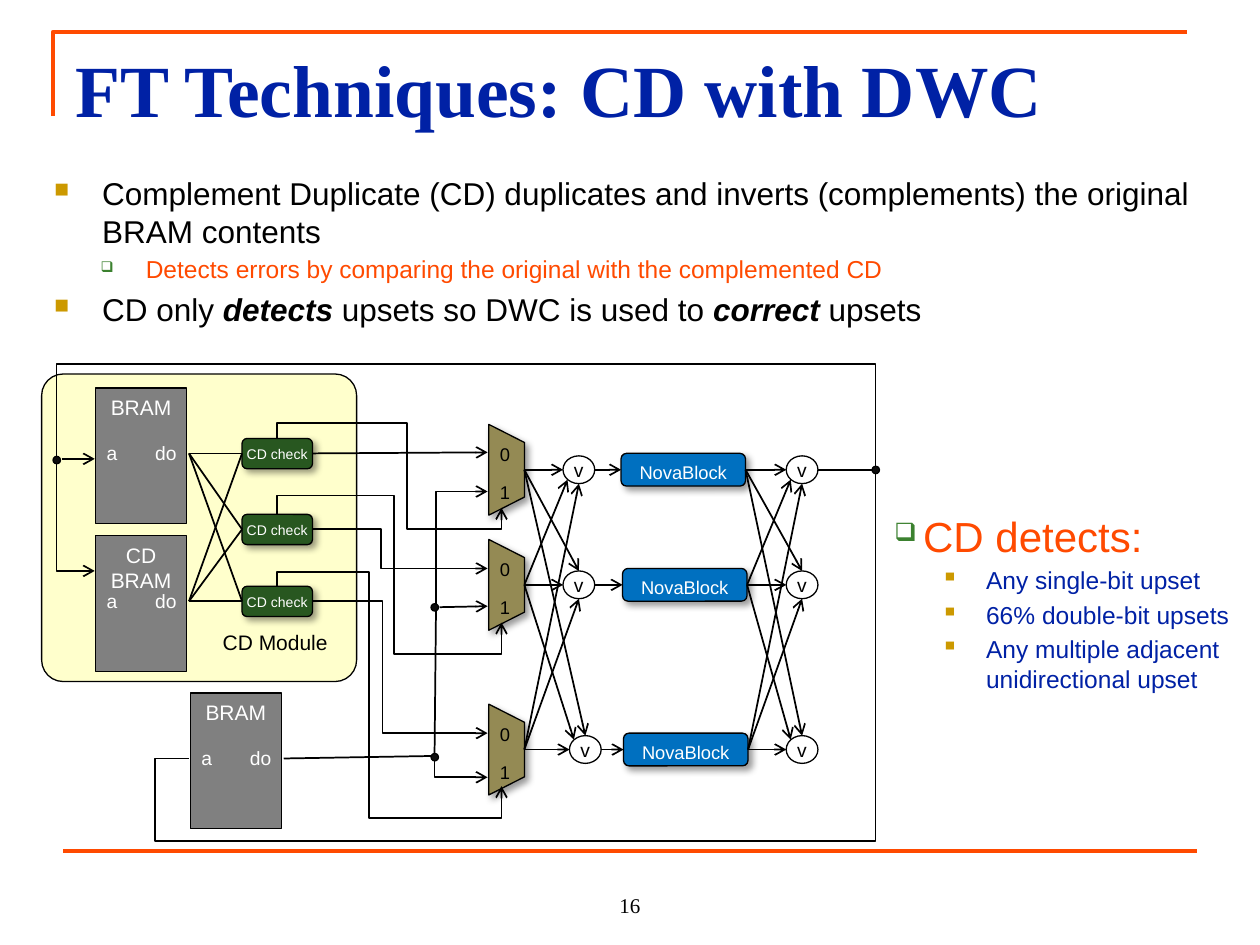
from lxml.etree import SubElement
from pptx import Presentation
from pptx.dml.color import RGBColor
from pptx.enum.shapes import MSO_CONNECTOR, MSO_SHAPE
from pptx.enum.text import MSO_ANCHOR, PP_ALIGN
from pptx.oxml.ns import qn
from pptx.util import Cm, Pt

BLACK, WHITE, BLUE, RED = "000000", "FFFFFF", "0021A5", "FF4A00"
GOLD, GREEN = "CC9900", "3B812F"
LEFT, MID, RIGHT = PP_ALIGN.LEFT, PP_ALIGN.CENTER, PP_ALIGN.RIGHT


def tint(code):
    return RGBColor.from_string(code)


def add(node, tag, **attrs):
    return SubElement(node, qn(tag), {k: str(v) for k, v in attrs.items()})


class Board:
    def __init__(self, deck, face="Arial"):
        self.slide = deck.slides.add_slide(deck.slide_layouts[6])
        self.shapes = self.slide.shapes
        self.face = face

    def style(self, para, size, color, align=LEFT, bold=None, face=None):
        para.alignment = align
        font = para.font
        font.name, font.size, font.bold = face or self.face, Pt(size), bold
        font.color.rgb = tint(color)

    def frame(self, x, y, w, h, wrap=True, anchor=MSO_ANCHOR.TOP):
        frame = self.shapes.add_textbox(Cm(x), Cm(y), Cm(w), Cm(h)).text_frame
        frame.word_wrap, frame.vertical_anchor = wrap, anchor
        return frame

    def label(self, text, x, y, w, h, size, color=BLACK, align=MID,
              wrap=True, anchor=MSO_ANCHOR.TOP, bold=None, face=None):
        para = self.frame(x, y, w, h, wrap, anchor).paragraphs[0]
        para.text = text
        self.style(para, size, color, align, bold, face)

    def bullets(self, x, y, w, h, items):
        """Each item: runs, size, colour, margin, indent, mark, its colour, its size, gap."""
        frame = self.frame(x, y, w, h)
        for i, (runs, size, color, left, hang, mark, hue, part, gap) in enumerate(items):
            para = frame.add_paragraph() if i else frame.paragraphs[0]
            for text, strong in runs:
                run = para.add_run()
                run.text = text
                if strong:
                    run.font.bold = run.font.italic = True
            props = para._p.get_or_add_pPr()
            props.set("marL", str(Cm(left)))
            props.set("indent", str(Cm(hang)))
            if gap:
                para.space_before = Pt(gap)
            add(add(props, "a:buClr"), "a:srgbClr", val=hue)
            add(props, "a:buSzPct", val=part * 1000)
            add(props, "a:buChar", char=mark)
            self.style(para, size, color)

    def block(self, kind, x, y, w, h, fill, text="", size=10.5, color=WHITE,
              anchor=MSO_ANCHOR.TOP, side=0.25, edge=0.13, adj=None, shade=False):
        shape = self.shapes.add_shape(kind, Cm(x), Cm(y), Cm(w), Cm(h))
        shape.shadow.inherit = False
        shape.fill.solid()
        shape.fill.fore_color.rgb = tint(fill)
        shape.line.color.rgb = tint(BLACK)
        shape.line.width = Pt(0.75)
        if adj is not None:
            shape.adjustments[0] = adj
        if shade:
            glow = add(shape.element.spPr.find(qn("a:effectLst")), "a:outerShdw",
                       blurRad=Pt(4), dist=Pt(3), dir=45 * 60000, rotWithShape=0)
            add(add(glow, "a:srgbClr", val=BLACK), "a:alpha", val=40000)
        if text:
            frame = shape.text_frame
            frame.word_wrap, frame.vertical_anchor = True, anchor
            frame.margin_left = frame.margin_right = Cm(side)
            frame.margin_top = frame.margin_bottom = Cm(edge)
            frame.text = text
            self.style(frame.paragraphs[0], size, color, MID)
        return shape

    def line(self, x1, y1, x2, y2, arrow=False, color=BLACK, width=1,
             kind=MSO_CONNECTOR.STRAIGHT):
        link = self.shapes.add_connector(kind, Cm(x1), Cm(y1), Cm(x2), Cm(y2))
        link.line.color.rgb = tint(color)
        link.line.width = Pt(width)
        props = link.element.spPr
        if arrow:
            add(props.find(qn("a:ln")), "a:tailEnd", type="arrow")
        add(props, "a:effectLst")
        return link

    def elbow(self, x1, y1, x2, y2, bends, turn=0, flip="", adj=(), arrow=True):
        w, h = abs(x2 - x1), abs(y2 - y1)
        if turn:
            w, h = h, w
        dx = -w / 2 if "h" in flip else w / 2
        dy = -h / 2 if "v" in flip else h / 2
        cx, cy = (x1 + x2) / 2, (y1 + y2) / 2
        link = self.line(cx - dx, cy - dy, cx + dx, cy + dy, arrow,
                         kind=MSO_CONNECTOR.ELBOW)
        props = link.element.spPr
        props.find(qn("a:xfrm")).set("rot", str(turn * 60000))
        geom = props.find(qn("a:prstGeom"))
        geom.set("prst", f"bentConnector{bends}")
        guides = geom.find(qn("a:avLst"))
        for i, part in enumerate(adj, 1):
            add(guides, "a:gd", name=f"adj{i}", fmla=f"val {round(part * 100000)}")

    def bram(self, text, x, y):
        self.block(MSO_SHAPE.RECTANGLE, x, y, 1.83, 2.74, "808080", text, 12)
        self.label("a", x - 0.03, y + 0.95, 0.74, 0.74, 11, WHITE, LEFT, False)
        self.label("do", x + 0.94, y + 0.95, 0.94, 0.74, 11, WHITE, RIGHT, False)

    def voter(self, x, y):
        self.block(MSO_SHAPE.FLOWCHART_CONNECTOR, x, y - 0.28, 0.64, 0.56, WHITE,
                   "v", 11, BLACK, MSO_ANCHOR.MIDDLE, 0, 0)

    def mux(self, y):
        shape = self.block(MSO_SHAPE.FLOWCHART_MANUAL_OPERATION, 9.3, y - 0.36,
                           1.83, 0.72, "948A54", shade=True)
        shape.rotation = 270
        for text, top in (("0", y - 0.66), ("1", y + 0.11)):
            self.label(text, 9.83, top, 0.53, 0.66, 10.5)

    def fan(self, outs, ins, rows):
        """Arrows from every output to every voter of the next stage."""
        for i, start in enumerate(outs):
            for j, goal in enumerate(ins):
                dx, dy = (0, 0) if i == j else (0.09, 0.2) if i == 1 else (0.32, 0.28)
                side = -1 if j > i else 1
                self.line(start, rows[i], goal + dx, rows[j] + side * dy, True)


def main():
    deck = Presentation()
    deck.slide_width, deck.slide_height = Cm(25.4), Cm(19.05)
    board = Board(deck)

    # Page frame, title and number
    pen = board.shapes.build_freeform(Cm(1.07), Cm(2.34))
    pen.add_line_segments([(Cm(1.07), Cm(0.64)), (Cm(23.93), Cm(0.64))], close=False)
    rule = pen.convert_to_shape()
    rule.shadow.inherit = False
    rule.fill.background()
    rule.line.color.rgb = tint(RED)
    rule.line.width = Pt(2.25)
    board.line(1.27, 17.15, 24.13, 17.15, color=RED, width=2.25)
    board.label("FT Techniques: CD with DWC", 1.27, 0.76, 22.86, 2.62, 42, BLUE,
                LEFT, bold=True, face="Times New Roman")
    board.label("16", 10.16, 17.35, 5.08, 1.27, 12, anchor=MSO_ANCHOR.BOTTOM,
                face="Times New Roman")

    # Main points
    top = (18, BLACK, 0.97, -0.97, "■", GOLD, 65)
    board.bullets(0.84, 3.38, 23.93, 2.74, [
        ([("Complement Duplicate (CD) duplicates and inverts (complements) "
           "the original BRAM contents", False)], *top, 0),
        ([("Detects errors by comparing the original with the complemented CD", False)],
         14, RED, 1.85, -0.91, "❑", GREEN, 60, 2.8),
        ([("CD only ", False), ("detects", True), (" upsets so DWC is used to ", False),
          ("correct ", True), ("upsets", False)], *top, 3.6)])

    # Memories and checkers
    board.block(MSO_SHAPE.ROUNDED_RECTANGLE, 0.84, 7.54, 6.35, 6.2, "FFFFCC", adj=0.07)
    board.label("CD Module", 4.24, 12.57, 2.97, 0.76, 12, align=LEFT)
    for text, x, y in (("BRAM", 1.93, 7.82), ("CD BRAM", 1.93, 10.8), ("BRAM", 3.84, 13.97)):
        board.bram(text, x, y)
    checks = (9.14, 10.67, 12.12)
    for y in checks:
        board.block(MSO_SHAPE.ROUNDED_RECTANGLE, 4.88, y - 0.3, 1.42, 0.61, "285720",
                    "CD check", 8, anchor=MSO_ANCHOR.MIDDLE, side=0, shade=True)
        for port in (checks[0], checks[2]):
            board.line(3.81, port, 4.88, y)

    # Three lanes: mux, voter, core, voter
    rows = (9.47, 11.79, 15.11)
    first, cores, last = (11.35, 11.35, 11.48), (12.52, 12.55, 12.57), (15.85,) * 3
    for y, near, core, far in zip(rows, first, cores, last):
        board.mux(y)
        board.voter(near, y)
        board.line(near + 0.64, y, core, y, True)
        board.block(MSO_SHAPE.ROUNDED_RECTANGLE, core, y - 0.33, 2.51, 0.66, "0070C0",
                    "NovaBlock", shade=True)
        board.voter(far, y)
    board.fan((10.57,) * 3, first, rows)
    board.fan([x + 2.51 for x in cores], last, rows)

    # Checker outputs and mux selects
    board.line(6.3, 9.14, 9.83, 9.12, True)
    board.elbow(6.3, 10.67, 9.83, 11.46, 3, adj=[0.39])
    board.elbow(6.3, 12.12, 9.83, 14.78, 3, adj=[0.4])
    for start, end, adj in ((8.84, 10.24, (-0.22, 0.58, 1.3)),
                            (10.36, 12.55, (-0.17, 0.52, 1.29)),
                            (11.81, 15.85, (-0.07, 0.41, 1.16))):
        board.elbow(5.59, start, 10.11, end, 5, 270, "h", adj)

    # Spare memory to the muxes
    board.line(5.72, 15.29, 8.69, 15.24)
    board.line(8.79, 12.29, 8.76, 15.19)
    board.line(8.86, 12.24, 9.83, 12.22, True)
    board.elbow(8.79, 12.17, 9.83, 9.91, 2, 90, "hv")
    board.elbow(8.76, 15.32, 9.83, 15.67, 2, 270, "h")

    # Feedback from the output to the addresses
    board.line(16.48, 9.47, 17.58, 9.47)
    board.elbow(17.65, 9.4, 1.14, 9.2, 3, 270, "v", [10.3], False)
    board.elbow(17.65, 9.55, 3.81, 15.29, 4, 90, "", [1.29, 1.05], False)
    board.elbow(1.14, 9.32, 1.91, 11.51, 2, 270, "h")
    board.line(1.24, 9.25, 1.91, 9.25, True)
    for x, y in ((17.58, 9.4), (1.07, 9.2), (8.69, 12.17), (8.69, 15.19)):
        board.block(MSO_SHAPE.FLOWCHART_CONNECTOR, x, y, 0.15, 0.15, "0D0D0D")

    # What CD detects
    notes = ("Any single-bit upset", "66% double-bit upsets",
             "Any multiple adjacent unidirectional upset")
    board.bullets(17.78, 10.16, 7.62, 5.28, [
        ([("CD detects:", False)], 24, RED, 0.58, -0.91, "❑", GREEN, 60, 0),
        *[([(note, False)], 14, BLUE, 1.85, -0.91, "▪", GOLD, 100, 2.8) for note in notes]])

    deck.save("out.pptx")


if __name__ == "__main__":
    main()
